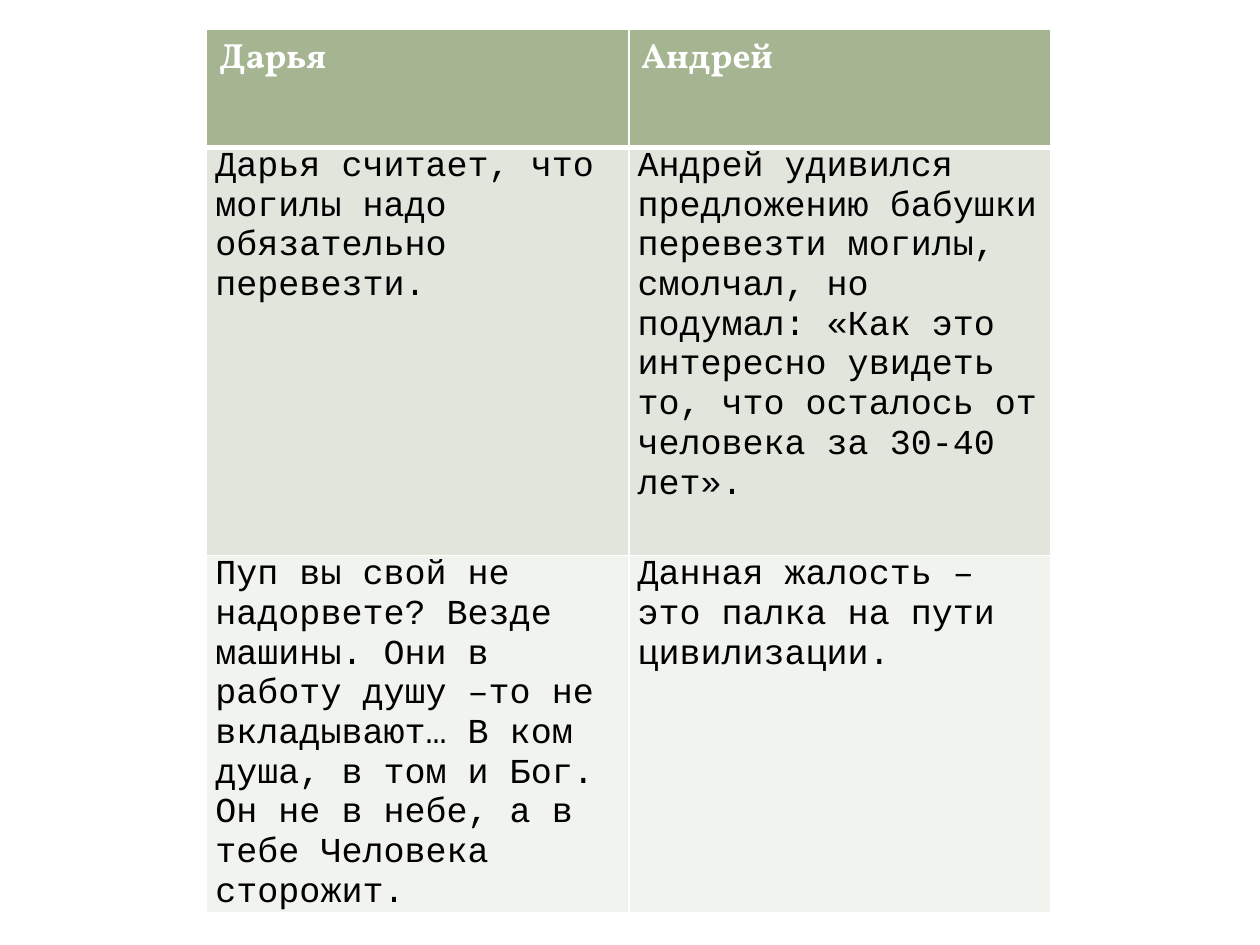
from dataclasses import dataclass

from lxml import etree
from pptx import Presentation
from pptx.dml.color import RGBColor
from pptx.enum.text import MSO_ANCHOR, PP_ALIGN
from pptx.oxml.ns import qn
from pptx.util import Inches, Pt

LEFT = PP_ALIGN.LEFT
TOP = MSO_ANCHOR.TOP


@dataclass(frozen=True)
class Theme:
    white: str = "FFFFFF"
    black: str = "000000"
    header_fill: str = "A5B592"
    band_fills: tuple[str, str] = ("E1E5DC", "F0F3EE")
    header_font: str = "Vollkorn"
    body_font: str = "Courier New"
    text_size: float = 20
    thin_line: float = 1
    thick_line: float = 3


@dataclass(frozen=True)
class TableRow:
    height: float
    texts: tuple[str, str]


THEME = Theme()
COLUMN_WIDTH = 3.35
ROWS = (
    TableRow(0.94, ("Дарья", "Андрей")),
    TableRow(3.24, (
        "Дарья считает, что могилы надо обязательно перевезти.",
        "Андрей удивился предложению бабушки перевезти могилы, смолчал, но "
        "подумал: «Как это интересно увидеть то, что осталось от человека "
        "за 30-40 лет».",
    )),
    TableRow(2.7, (
        "Пуп вы свой не надорвете? Везде машины. Они в работу душу –то не "
        "вкладывают… В ком душа, в том и Бог. Он не в небе, а в тебе "
        "Человека сторожит.",
        "Данная жалость – это палка на пути цивилизации.",
    )),
)


def write_text(frame, text: str, *, font: str, color: str, bold: bool) -> None:
    para = frame.paragraphs[0]
    para.alignment = LEFT
    span = para.add_run()
    span.text = text
    span.font.name = font
    span.font.size = Pt(THEME.text_size)
    span.font.bold = bold
    span.font.color.rgb = RGBColor.from_string(color)


def set_borders(cell, top: float, bottom: float) -> None:
    """Draw the four white borders; they must come before the cell's fill."""
    properties = cell._tc.get_or_add_tcPr()
    widths = {"L": THEME.thin_line, "R": THEME.thin_line, "T": top, "B": bottom}
    for position, (side, width) in enumerate(widths.items()):
        line = etree.Element(qn(f"a:ln{side}"), w=str(Pt(width)))
        fill = etree.SubElement(line, qn("a:solidFill"))
        etree.SubElement(fill, qn("a:srgbClr"), val=THEME.white)
        properties.insert(position, line)


def draw_cell(cell, text: str, row_index: int) -> None:
    header = row_index == 0
    fill = THEME.header_fill if header else THEME.band_fills[row_index - 1]
    cell.fill.solid()
    cell.fill.fore_color.rgb = RGBColor.from_string(fill)
    cell.vertical_anchor = TOP
    if not header:
        cell.margin_left = cell.margin_right = Inches(0.07)
        cell.margin_top = cell.margin_bottom = 0
    write_text(
        cell.text_frame, text,
        font=THEME.header_font if header else THEME.body_font,
        color=THEME.white if header else THEME.black,
        bold=header,
    )
    set_borders(
        cell,
        top=THEME.thick_line if row_index == 1 else THEME.thin_line,
        bottom=THEME.thick_line if header else THEME.thin_line,
    )


def draw_table(page, rows: tuple[TableRow, ...]) -> None:
    column_count = len(rows[0].texts)
    table = page.shapes.add_table(
        len(rows), column_count, Inches(1.64), Inches(0.23),
        Inches(COLUMN_WIDTH * column_count),
        Inches(sum(row.height for row in rows)),
    ).table
    for column in table.columns:
        column.width = Inches(COLUMN_WIDTH)
    for row_index, row in enumerate(rows):
        table.rows[row_index].height = Inches(row.height)
        for column_index, text in enumerate(row.texts):
            draw_cell(table.cell(row_index, column_index), text, row_index)


def main() -> None:
    # Blank page
    deck = Presentation()
    deck.slide_width, deck.slide_height = Inches(10), Inches(7.5)
    page = deck.slides.add_slide(deck.slide_layouts[6])

    # Comparison of the two characters
    draw_table(page, ROWS)
    deck.save("out.pptx")


if __name__ == "__main__":
    main()
